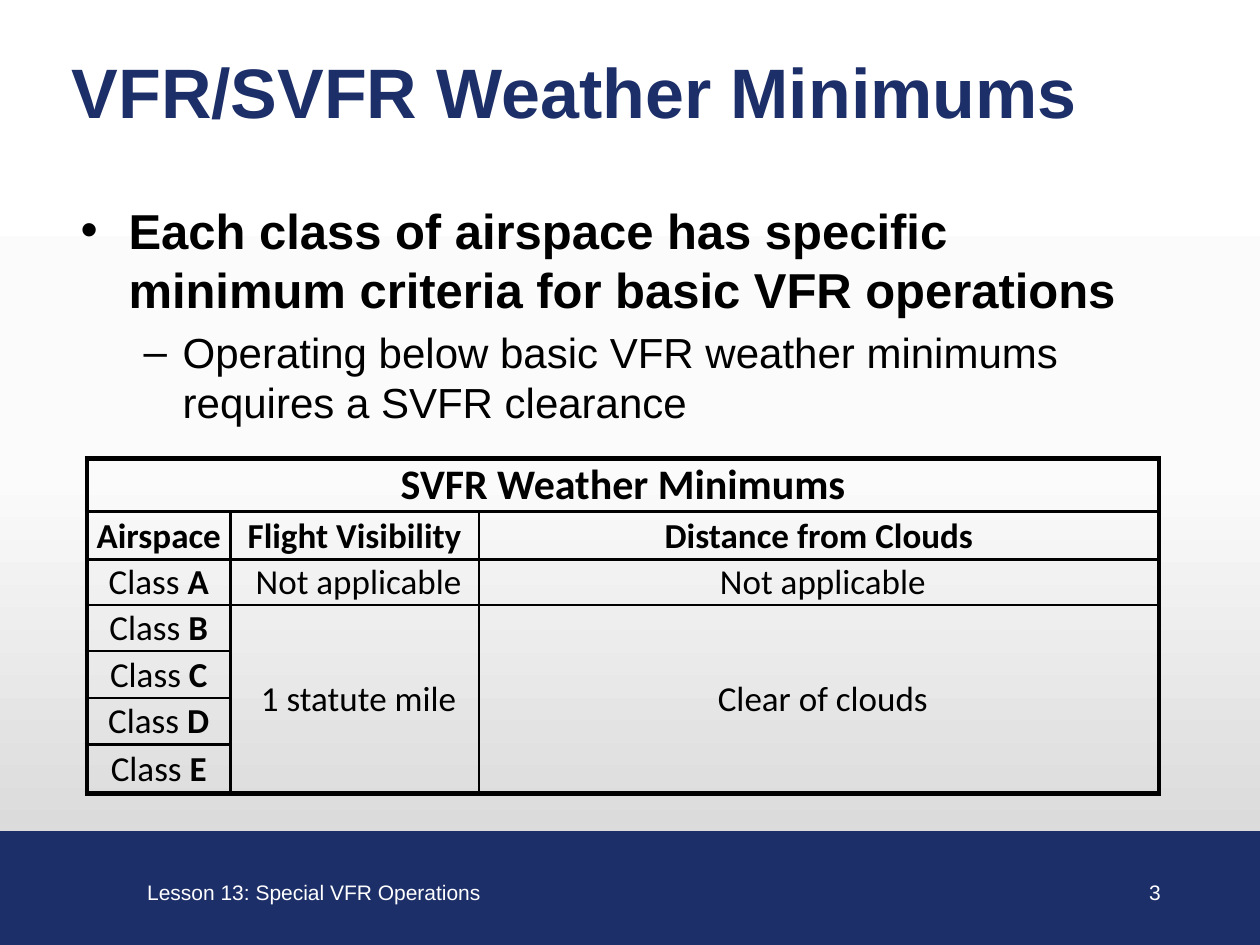
"""Build the slide on VFR and SVFR weather minimums."""
from pptx import Presentation
from pptx.dml.color import RGBColor
from pptx.enum.shapes import MSO_SHAPE as Shape
from pptx.enum.text import MSO_ANCHOR as Anchor, MSO_AUTO_SIZE as Fit, PP_ALIGN as Align
from pptx.oxml import parse_xml
from pptx.oxml.ns import nsdecls
from pptx.util import Inches, Pt

NAVY = RGBColor(0x1D, 0x2F, 0x68)
BLACK = RGBColor(0, 0, 0)
WHITE = RGBColor(0xFF, 0xFF, 0xFF)
SHADES = [(0, WHITE), (50, RGBColor(0xFB, 0xFB, 0xFB)), (100, RGBColor(0xD0, 0xD0, 0xD0))]
NO_STYLE = "{2D5ABB26-0587-4C30-8999-92F81FD0307C}"

POINTS = [
    ("Each class of airspace has specific minimum criteria for basic VFR operations",
     0, "•", 28, True, 0.38, 0.38),
    ("Operating below basic VFR weather minimums requires a SVFR clearance",
     1, "–", 24, False, 0.81, 0.31),
]
WIDTHS = [1.14, 1.97, 5.4]
HEIGHTS = [0.42, 0.38, 0.36, 0.37, 0.37, 0.37, 0.39]
CELLS = [
    (0, 0, "SVFR Weather Minimums", 24, True),
    (1, 0, "Airspace", 20, True),
    (1, 1, "Flight Visibility", 20, True),
    (1, 2, "Distance from Clouds", 20, True),
    (2, 1, " Not applicable", 20, False),
    (2, 2, " Not applicable", 20, False),
    (3, 1, " 1 statute mile", 20, False),
    (3, 2, " Clear of clouds", 20, False),
]
MERGES = [(0, 0, 0, 2), (3, 1, 6, 1), (3, 2, 6, 2)]


class Deck:
    """Hold the style and the current slide."""

    def __init__(self):
        self.show = Presentation()
        self.show.slide_width, self.show.slide_height = Inches(10), Inches(7.5)
        self.slide = self.show.slides.add_slide(self.show.slide_layouts[1])
        self.shapes = self.slide.shapes

    def back(self, shades):
        stops = "".join(f'<a:gs pos="{spot * 1000}"><a:srgbClr val="{tone}"/></a:gs>'
                        for spot, tone in shades)
        self.slide.element.cSld.insert(0, parse_xml(
            f'<p:bg {nsdecls("p", "a")}><p:bgPr><a:gradFill rotWithShape="1">'
            f'<a:gsLst>{stops}</a:gsLst><a:lin ang="5400000" scaled="0"/></a:gradFill>'
            '<a:effectLst/></p:bgPr></p:bg>'))

    def place(self, shape, left, top, width, height):
        shape.left, shape.top = Inches(left), Inches(top)
        shape.width, shape.height = Inches(width), Inches(height)

    def style(self, para, size, color, bold=False, face="Arial"):
        font = para.font
        font.name, font.size, font.bold = face, Pt(size), bold
        font.color.rgb = color

    def band(self, *spot):
        bar = self.shapes.add_shape(Shape.RECTANGLE, *map(Inches, spot))
        bar.shadow.inherit = False
        bar.fill.solid()
        bar.fill.fore_color.rgb = bar.line.color.rgb = NAVY
        bar.line.width = Pt(0.75)

    def title(self, text, *spot):
        head = self.shapes.title
        self.place(head, *spot)
        frame = head.text_frame
        frame.text, frame.vertical_anchor = text, Anchor.MIDDLE
        frame.auto_size = Fit.NONE
        para = frame.paragraphs[0]
        para.alignment = Align.LEFT
        self.style(para, 40, NAVY, True)

    def body(self, points, *spot):
        box = self.slide.placeholders[1]
        self.place(box, *spot)
        frame = box.text_frame
        frame.auto_size = Fit.NONE
        for i, (text, level, mark, size, bold, left, hang) in enumerate(points):
            para = frame.add_paragraph() if i else frame.paragraphs[0]
            para.text, para.level = text, level
            props = para._p.get_or_add_pPr()
            props.set("marL", str(Inches(left)))
            props.set("indent", str(-Inches(hang)))
            props.append(parse_xml(f'<a:buChar {nsdecls("a")} char="{mark}"/>'))
            para.space_before = Pt(size * 0.2 if i else 0)
            self.style(para, size, BLACK, bold)

    def label(self, text, align, *spot):
        frame = self.shapes.add_textbox(*map(Inches, spot)).text_frame
        frame.word_wrap, frame.vertical_anchor = True, Anchor.MIDDLE
        para = frame.paragraphs[0]
        para.text, para.alignment = text, align
        self.style(para, 12, WHITE)

    def edge(self, cell, row, col):
        last, end = row + cell.span_height, col + cell.span_width
        outer = {"L": col == 0, "R": end == len(WIDTHS),
                 "T": row == 0, "B": last == len(HEIGHTS)}
        for i, (side, thick) in enumerate(outer.items()):
            cell._tc.get_or_add_tcPr().insert(i, parse_xml(
                f'<a:ln{side} {nsdecls("a")} w="{Pt(3 if thick else 1.5)}"><a:solidFill>'
                f'<a:srgbClr val="{BLACK}"/></a:solidFill></a:ln{side}>'))

    def table(self, left, top):
        spot = (left, top, sum(WIDTHS), sum(HEIGHTS))
        grid = self.shapes.add_table(len(HEIGHTS), len(WIDTHS), *map(Inches, spot)).table
        grid.first_row = grid.horz_banding = False
        grid._tbl.tblPr[0].text = NO_STYLE
        for line, size in zip(grid.rows, HEIGHTS):
            line.height = Inches(size)
        for line, size in zip(grid.columns, WIDTHS):
            line.width = Inches(size)
        for row, col, last, end in MERGES:
            grid.cell(row, col).merge(grid.cell(last, end))
        for row, col, text, size, bold in CELLS:
            self.fill(grid.cell(row, col), row, col, [(text, bold)], size)
        for row, name in enumerate("ABCDE", 2):
            self.fill(grid.cell(row, 0), row, 0, [("Class ", False), (name, True)], 20)

    def fill(self, cell, row, col, parts, size):
        cell.fill.background()
        cell.vertical_anchor = Anchor.MIDDLE
        cell.margin_left = cell.margin_right = cell.margin_top = Inches(0.01)
        cell.margin_bottom = 0
        para = cell.text_frame.paragraphs[0]
        para.alignment = Align.CENTER
        for text, bold in parts:
            run = para.add_run()
            run.text, run.font.bold = text, bold
        self.style(para, size, BLACK, parts[0][1], "Calibri")
        self.edge(cell, row, col)


def main():
    deck = Deck()
    deck.back(SHADES)
    deck.band(-0.02, 6.6, 10.02, 0.9)
    deck.label("Lesson 13: Special VFR Operations", Align.LEFT, 1.07, 6.93, 3.16, 0.3)
    deck.title("VFR/SVFR Weather Minimums", 0.47, 0.38, 9.27, 0.67)
    deck.body(POINTS, 0.54, 1.54, 8.8, 4.8)
    deck.label("3", Align.RIGHT, 7.06, 6.93, 2.25, 0.3)
    deck.table(0.69, 3.64)
    deck.show.save("out.pptx")


if __name__ == "__main__":
    main()
